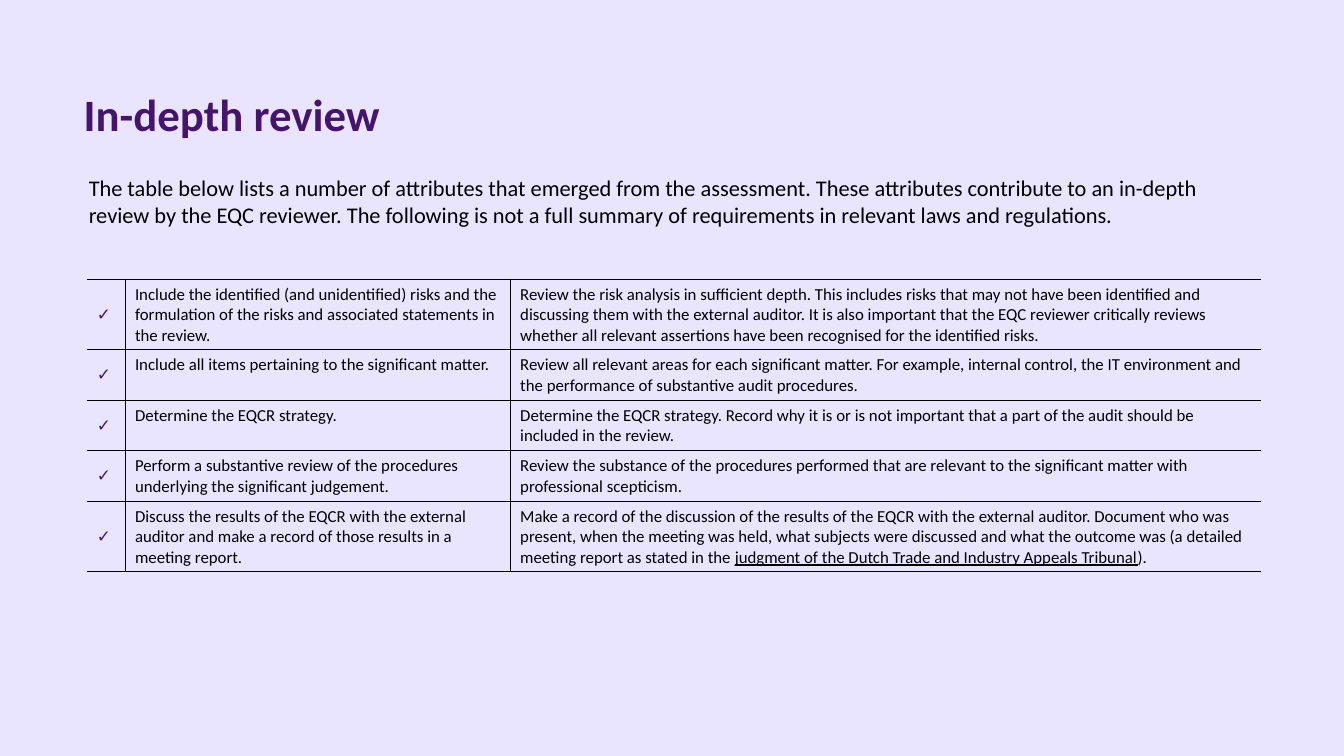
import dataclasses

import lxml.etree
import pptx
import pptx.dml.color
import pptx.enum.text
import pptx.oxml.ns
import pptx.util

COLORS = {"background": "E9E5FF", "heading": "45156C", "text": "000000"}
FONT = "Calibri"
SLIDE_WIDTH = pptx.util.Inches(13.33)
SLIDE_HEIGHT = pptx.util.Inches(7.5)
BORDER_WIDTH = pptx.util.Pt(0.5)
COLUMN_SHARES = (2.85, 28.66, 55.89)
ROW_SHARE = 5.47


@dataclasses.dataclass(frozen=True)
class Area:
    """A rectangle in percent of the slide's width and height."""

    left: float
    top: float
    width: float
    height: float

    def lengths(self) -> tuple[int, int, int, int]:
        return (across(self.left), down(self.top),
                across(self.width), down(self.height))


@dataclasses.dataclass(frozen=True)
class Attribute:
    summary: str
    guidance: str
    underlined: str = ""
    ending: str = ""


TITLE_AREA = Area(6.23, 12.67, 87.62, 12.4)
INTRODUCTION_AREA = Area(6.23, 23.07, 87.62, 12.4)

INTRODUCTION = (
    "The table below lists a number of attributes that emerged from the assessment. "
    "These attributes contribute to an in-depth review by the EQC reviewer. "
    "The following is not a full summary of requirements in relevant laws and regulations."
)
ATTRIBUTES = (
    Attribute(
        "Include the identified (and unidentified) risks and the formulation of the "
        "risks and associated statements in the review.",
        "Review the risk analysis in sufficient depth. This includes risks that may not "
        "have been identified and discussing them with the external auditor. It is also "
        "important that the EQC reviewer critically reviews whether all relevant "
        "assertions have been recognised for the identified risks.",
    ),
    Attribute(
        "Include all items pertaining to the significant matter.",
        "Review all relevant areas for each significant matter. For example, internal "
        "control, the IT environment and the performance of substantive audit procedures.",
    ),
    Attribute(
        "Determine the EQCR strategy.",
        "Determine the EQCR strategy. Record why it is or is not important that a part "
        "of the audit should be included in the review.",
    ),
    Attribute(
        "Perform a substantive review of the procedures underlying the significant judgement.",
        "Review the substance of the procedures performed that are relevant to the "
        "significant matter with professional scepticism.",
    ),
    Attribute(
        "Discuss the results of the EQCR with the external auditor and make a record of "
        "those results in a meeting report.",
        "Make a record of the discussion of the results of the EQCR with the external "
        "auditor. Document who was present, when the meeting was held, what subjects were "
        "discussed and what the outcome was (a detailed meeting report as stated in the ",
        underlined="judgment of the Dutch Trade and Industry Appeals Tribunal",
        ending=").",
    ),
)


def across(percent: float) -> int:
    return round(SLIDE_WIDTH * percent / 100)


def down(percent: float) -> int:
    return round(SLIDE_HEIGHT * percent / 100)


def rgb(name: str) -> pptx.dml.color.RGBColor:
    return pptx.dml.color.RGBColor.from_string(COLORS[name])


def add_text(paragraph, text: str, *, size: float = 12, color: str = "text",
             bold: bool = False, underline: bool = False) -> None:
    run = paragraph.add_run()
    run.text = text
    run.font.name = FONT
    run.font.size = pptx.util.Pt(size)
    run.font.color.rgb = rgb(color)
    run.font.bold = bold
    run.font.underline = underline


def add_text_box(slide, area: Area, text: str, *, indent: float = 0,
                 line_spacing: float = 1.0, **text_format) -> None:
    frame = slide.shapes.add_textbox(*area.lengths()).text_frame
    frame.word_wrap = True
    frame.margin_left = pptx.util.Inches(indent)
    frame.margin_top = frame.margin_right = frame.margin_bottom = 0
    paragraph = frame.paragraphs[0]
    paragraph.line_spacing = line_spacing
    add_text(paragraph, text, **text_format)


def set_borders(cell, sides: str) -> None:
    """Rule the given sides (letters from LRTB) and clear the others."""
    properties = cell._tc.get_or_add_tcPr()
    qualified = pptx.oxml.ns.qn
    for side in "LRTB":
        line = lxml.etree.SubElement(properties, qualified(f"a:ln{side}"), w=str(BORDER_WIDTH))
        if side in sides:
            fill = lxml.etree.SubElement(line, qualified("a:solidFill"))
            lxml.etree.SubElement(fill, qualified("a:srgbClr"), val=COLORS["text"])
        else:
            lxml.etree.SubElement(line, qualified("a:noFill"))


def add_attribute_table(slide) -> None:
    area = Area(6.45, 36.93, sum(COLUMN_SHARES), ROW_SHARE * len(ATTRIBUTES))
    table = slide.shapes.add_table(
        len(ATTRIBUTES), len(COLUMN_SHARES), *area.lengths()).table
    table.first_row = table.horz_banding = False
    for column, share in zip(table.columns, COLUMN_SHARES):
        column.width = across(share)
    for row, attribute in zip(table.rows, ATTRIBUTES):
        row.height = down(ROW_SHARE)
        for cell, sides in zip(row.cells, ("RTB", "LRTB", "LTB")):
            set_borders(cell, sides)
            cell.fill.background()
        check, summary, guidance = row.cells
        check.vertical_anchor = pptx.enum.text.MSO_ANCHOR.MIDDLE
        add_text(check.text_frame.paragraphs[0], "✓", color="heading", bold=True)
        add_text(summary.text_frame.paragraphs[0], attribute.summary)
        paragraph = guidance.text_frame.paragraphs[0]
        add_text(paragraph, attribute.guidance)
        if attribute.underlined:
            add_text(paragraph, attribute.underlined, underline=True)
            add_text(paragraph, attribute.ending)


def main() -> None:
    presentation = pptx.Presentation()
    presentation.slide_width = SLIDE_WIDTH
    presentation.slide_height = SLIDE_HEIGHT
    slide = presentation.slides.add_slide(presentation.slide_layouts[6])
    slide.background.fill.solid()
    slide.background.fill.fore_color.rgb = rgb("background")
    add_text_box(slide, TITLE_AREA, "In-depth review",
                 line_spacing=0.84, size=32, color="heading", bold=True)
    add_text_box(slide, INTRODUCTION_AREA, INTRODUCTION, indent=0.05, size=16)
    add_attribute_table(slide)
    presentation.save("out.pptx")


if __name__ == "__main__":
    main()
